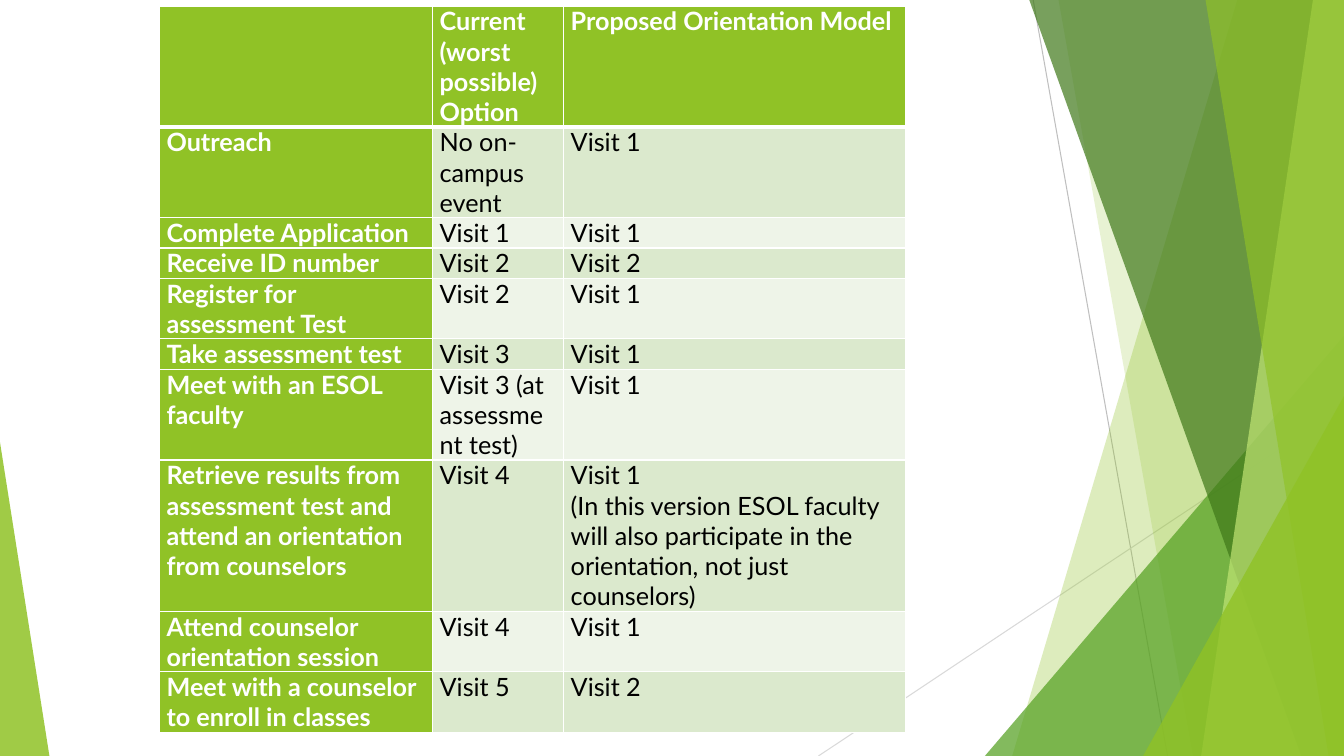
from lxml import etree
from pptx import Presentation
from pptx import util as u
from pptx.dml.color import RGBColor
from pptx.enum import shapes, text
from pptx.oxml import ns

Pt = u.Pt
WIDE, HIGH = 960, 540
LINE = 21.6
FONT = "Lato"
HUES = {
    "lime": "90C226", "leaf": "54A021", "moss": "3F7819", "pale": "C0E474",
    "white": "FFFFFF", "black": "000000", "odd": "DBE9CD", "even": "EEF4E8",
    "gray": "BFBFBF", "mist": "D9D9D9",
}
COLS = [195.1, 93.6, 244.1]
HEAD = ["", "Current (worst possible) Option", "Proposed Orientation Model"]
# Each step: lines of text in its tallest cell, then its three cells
STEPS = [
    (3, "Outreach", "No on-campus event", "Visit 1"),
    (1, "Complete Application", "Visit 1", "Visit 1"),
    (1, "Receive ID number", "Visit 2", "Visit 2"),
    (2, "Register for assessment Test", "Visit 2", "Visit 1"),
    (1, "Take assessment test", "Visit 3", "Visit 1"),
    (3, "Meet with an ESOL faculty", "Visit 3 (at assessment test)", "Visit 1"),
    (5, "Retrieve results from assessment test and attend an orientation from counselors",
     "Visit 4", "Visit 1\n(In this version ESOL faculty will also participate in the "
     "orientation, not just counselors)"),
    (2, "Attend counselor orientation session", "Visit 4", "Visit 1"),
    (2, "Meet with a counselor to enroll in classes", "Visit 5", "Visit 2"),
]


def color(name):
    return RGBColor.from_string(HUES[name])


def paint(shape, hue, alpha):
    """Fill a shape with a see-through colour and no outline."""
    shape.shadow.inherit = False
    shape.fill.solid()
    shape.fill.fore_color.rgb = color(hue)
    shape.line.fill.background()
    tint = shape._element.spPr.find(".//" + ns.qn("a:srgbClr"))
    etree.SubElement(tint, ns.qn("a:alpha")).set("val", str(alpha * 1000))


def rule(slide, start, end, hue):
    line = slide.shapes.add_connector(
        shapes.MSO_CONNECTOR.STRAIGHT, *[Pt(n) for n in start + end])
    line.line.color.rgb = color(hue)
    line.line.width = Pt(0.75)
    etree.SubElement(line._element.spPr, ns.qn("a:effectLst"))


def band(slide, top, foot, hue, alpha):
    """Draw a full-height band from a slanted left side to the slide's right edge."""
    form = slide.shapes.build_freeform(Pt(top), Pt(-0.7))
    form.add_line_segments(
        [(Pt(WIDE), Pt(-0.7)), (Pt(WIDE), Pt(HIGH)), (Pt(foot), Pt(HIGH))])
    paint(form.convert_to_shape(), hue, alpha)


def wedge(slide, left, width, height, peak, hue, alpha):
    """Draw a triangle that stands on the slide's bottom edge."""
    shape = slide.shapes.add_shape(
        shapes.MSO_SHAPE.ISOSCELES_TRIANGLE,
        Pt(left), Pt(HIGH - height), Pt(width), Pt(height))
    shape.adjustments[0] = peak
    paint(shape, hue, alpha)


def facets(slide, right):
    """Draw the decoration, measured leftwards from the right edge."""
    rule(slide, (right - 222, 0), (right - 126, HIGH), "gray")
    rule(slide, (right, 290.2), (right - 375.4, HIGH), "mist")
    band(slide, right - 76, right - 237, "lime", 30)
    band(slide, right - 204, right - 108, "lime", 20)
    wedge(slide, right - 256.5, 256.5, 300.2, 1, "leaf", 72)
    band(slide, right - 225, right - 30.5, "moss", 70)
    band(slide, right - 22, right - 102, "pale", 70)
    band(slide, right - 99, right - 11, "lime", 65)
    wedge(slide, right - 143.5, 143.5, 257, 1, "lime", 80)
    wedge(slide, 0, 35.3, 224, 0, "lime", 85)


def write(frame, words, size=18, hue="black", bold=False):
    frame.word_wrap = True
    frame.text = words
    for para in frame.paragraphs:
        para.alignment = text.PP_ALIGN.LEFT
        para.font.size = Pt(size)
        para.font.name = FONT
        para.font.bold = bold
        para.font.color.rgb = color(hue)


def edge(cell, side, width):
    line = etree.SubElement(
        cell._tc.get_or_add_tcPr(), ns.qn("a:ln" + side), w=str(Pt(width)))
    fill = etree.SubElement(line, ns.qn("a:solidFill"))
    etree.SubElement(fill, ns.qn("a:srgbClr"), val=HUES["white"])


def visits(slide, left, top):
    """Place the table that compares visits per step."""
    rows = [(4, *HEAD)] + STEPS
    tall = LINE * sum(row[0] for row in rows)
    grid = slide.shapes.add_table(
        len(rows), len(COLS), Pt(left), Pt(top), Pt(sum(COLS)), Pt(tall)).table
    for col, width in zip(grid.columns, COLS):
        col.width = Pt(width)
    for r, (lines, *words) in enumerate(rows):
        grid.rows[r].height = Pt(LINE * lines)
        for c, word in enumerate(words):
            cell = grid.cell(r, c)
            label = r == 0 or c == 0
            cell.margin_left = cell.margin_right = Pt(5)
            cell.margin_top = cell.margin_bottom = 0
            cell.vertical_anchor = text.MSO_ANCHOR.TOP
            write(cell.text_frame, word, hue="white" if label else "black", bold=label)
            for side in "LRTB":
                thick = (r, side) in ((0, "B"), (1, "T"))
                edge(cell, side, 3 if thick else 1)
            cell.fill.solid()
            cell.fill.fore_color.rgb = color(
                "lime" if label else "odd" if r % 2 else "even")


def main():
    deck = Presentation()
    deck.slide_width, deck.slide_height = Pt(WIDE), Pt(HIGH)
    slide = deck.slides.add_slide(deck.slide_layouts[6])
    facets(slide, WIDE)
    visits(slide, 114, 4.3)
    deck.save("out.pptx")


if __name__ == "__main__":
    main()
